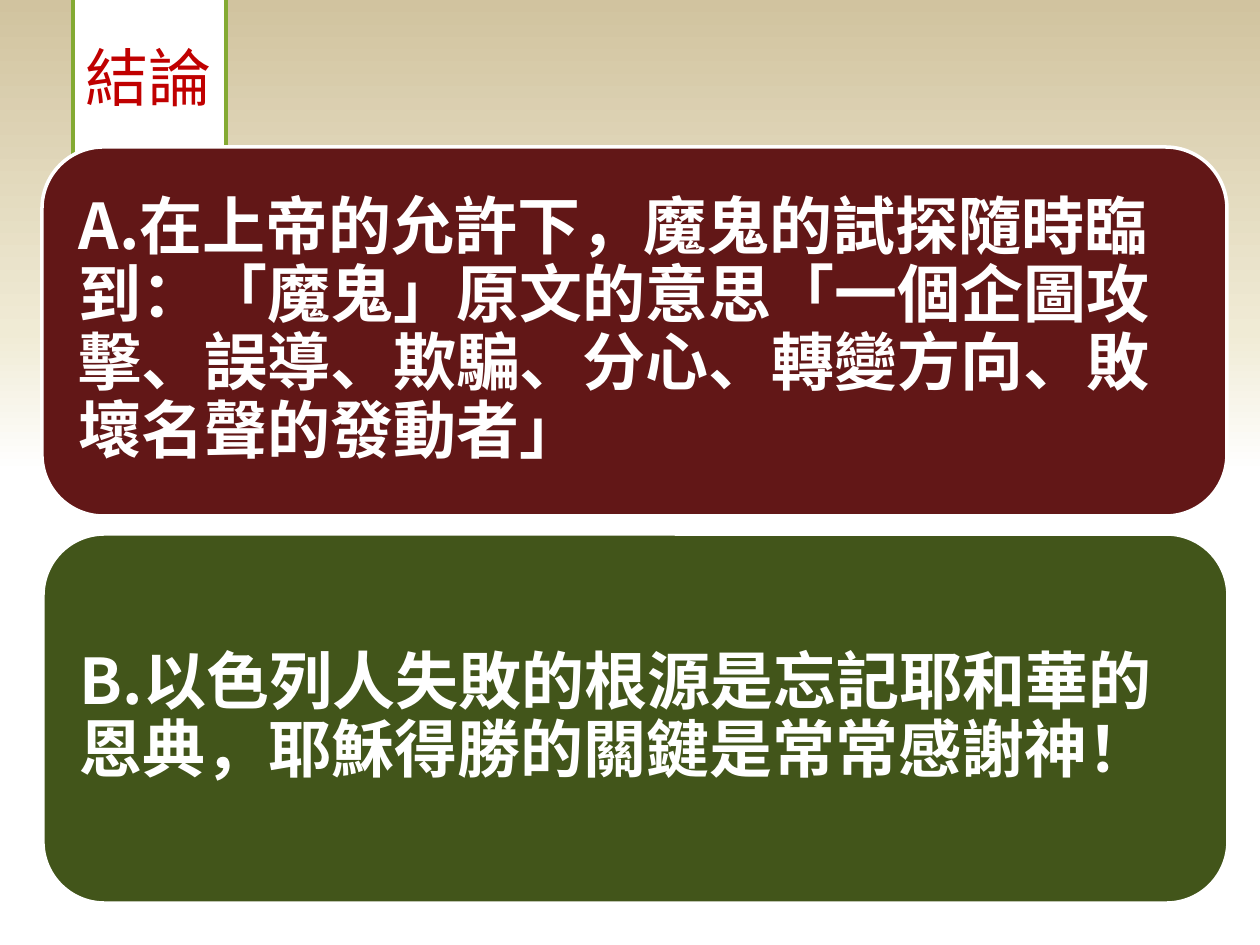
import copy

import pptx
import pptx.dml.color
import pptx.enum.shapes
import pptx.enum.text
import pptx.oxml.ns
import pptx.util

RGB = pptx.dml.color.RGBColor
WHITE = RGB(0xFF, 0xFF, 0xFF)
CREAM = RGB(0xF0, 0xEB, 0xD5)
SAND = RGB(0xD1, 0xC3, 0x9F)
LIME = RGB(0x84, 0xAA, 0x33)
RED = RGB(0xC0, 0x00, 0x00)
WINE = RGB(0x62, 0x17, 0x17)
OLIVE = RGB(0x42, 0x55, 0x1A)

ANCHOR = pptx.enum.text.MSO_ANCHOR
ALIGN = pptx.enum.text.PP_ALIGN
qn = pptx.oxml.ns.qn


def px(n):
    return pptx.util.Emu(round(n * 914400 / 126))


def style(shape, fill, line, face, color, bold):
    """Format the box and its single paragraph."""
    shape.fill.solid()
    shape.fill.fore_color.rgb = fill
    shape.line.color.rgb = line
    shape.line.width = pptx.util.Pt(2)
    shape.text_frame.vertical_anchor = ANCHOR.MIDDLE
    para = shape.text_frame.paragraphs[0]
    para.alignment = ALIGN.LEFT
    para.line_spacing = 0.9 if bold else 1.0
    for run in para.runs:
        run.font.name = face
        run.font.size = pptx.util.Pt(36)
        run.font.bold = bold
        run.font.color.rgb = color
        east = copy.deepcopy(run.font._element.find(qn("a:latin")))
        east.tag = qn("a:ea")
        run.font._element.find(qn("a:latin")).addnext(east)


deck = pptx.Presentation()
deck.slide_width, deck.slide_height = px(1260), px(945)
slide = deck.slides.add_slide(deck.slide_layouts[5])

# Background fades upward from white to sand
back = slide.background.fill
back.gradient()
back.gradient_angle = 90
stops = slide._element.find(".//" + qn("a:gsLst"))
stops.append(copy.deepcopy(stops[0]))
fades = [(0.5, WHITE), (0.65, CREAM), (1, SAND)]
for stop, (place, color) in zip(back.gradient_stops, fades):
    stop.position = place
    stop.color.rgb = color

title = slide.shapes.title
title.left, title.top, title.width, title.height = px(73), px(32), px(153), px(89)
title.text_frame.text = "結論"
title.text_frame.word_wrap = False
title.text_frame.auto_size = pptx.enum.text.MSO_AUTO_SIZE.SHAPE_TO_FIT_TEXT
style(title, WHITE, LIME, "Lato", RED, False)

points = [
    (WINE, "A.在上帝的允許下，魔鬼的試探隨時臨到：「魔鬼」原文的意思「一個企圖攻擊、"
           "誤導、欺騙、分心、轉變方向、敗壞名聲的發動者」"),
    (OLIVE, "B.以色列人失敗的根源是忘記耶和華的恩典，耶穌得勝的關鍵是常常感謝神！"),
]
for i, (fill, text) in enumerate(points):
    box = slide.shapes.add_shape(
        pptx.enum.shapes.MSO_SHAPE.ROUNDED_RECTANGLE,
        px(42 + i), px(147 + 387 * i), px(1185), px(369))
    box.shadow.inherit = False
    frame = box.text_frame
    frame.text = text
    frame.word_wrap = True
    frame.margin_left = frame.margin_right = px(19)
    frame.margin_top = frame.margin_bottom = px(9)
    style(box, fill, WHITE, "Noto Sans CJK SC", WHITE, True)
    frame.paragraphs[0].space_after = pptx.util.Pt(12.6)

deck.save("out.pptx")
